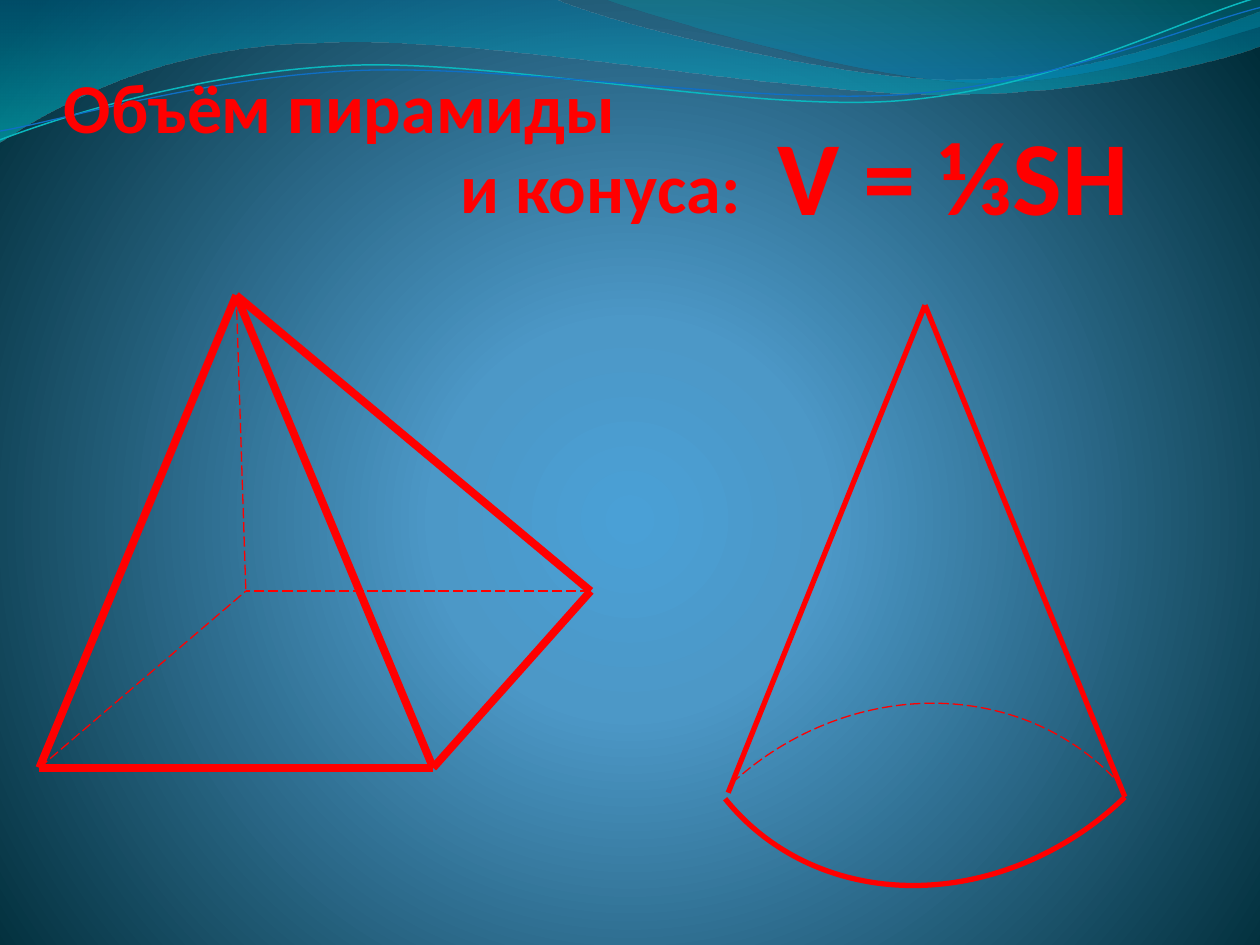
import lxml.etree
import pptx
import pptx.dml.color
import pptx.enum.dml
import pptx.enum.shapes
import pptx.enum.text
import pptx.oxml.ns
import pptx.util

Pt = pptx.util.Pt
RED = pptx.dml.color.RGBColor(0xFF, 0x00, 0x00)
SKY = pptx.dml.color.RGBColor(0x4A, 0xA0, 0xD6)
STEEL = pptx.dml.color.RGBColor(0x4C, 0x98, 0xC7)
NIGHT = pptx.dml.color.RGBColor(0x00, 0x2C, 0x38)
OCEAN = pptx.dml.color.RGBColor(0x00, 0x74, 0xA1)
AQUA = pptx.dml.color.RGBColor(0x00, 0xC6, 0xCF)
TEAL = pptx.dml.color.RGBColor(0x00, 0xA1, 0xA9)
AZURE = pptx.dml.color.RGBColor(0x00, 0x8B, 0xBF)
CYAN = pptx.dml.color.RGBColor(0x0A, 0xB8, 0xBF)
BLUE = pptx.dml.color.RGBColor(0x0F, 0x6F, 0xC6)
DASH = pptx.enum.dml.MSO_LINE.LONG_DASH


def add_node(parent, tag, **attributes):
    """Append a DrawingML element and return it."""
    node = lxml.etree.SubElement(parent, pptx.oxml.ns.qn(tag))
    for name, value in attributes.items():
        node.set(name, str(value))
    return node


def set_gradient(fill, element, stops, circle=None):
    """Fill with (percent, colour, opacity) stops, downwards or towards a circle's rectangle."""
    fill.gradient()
    gradient = next(element.iter(pptx.oxml.ns.qn("a:gradFill")))
    for child in list(gradient):
        gradient.remove(child)
    stop_list = add_node(gradient, "a:gsLst")
    for percent, colour, opacity in stops:
        stop = add_node(stop_list, "a:gs", pos=percent * 1000)
        shade = add_node(stop, "a:srgbClr", val=colour)
        if opacity < 100:
            add_node(shade, "a:alpha", val=opacity * 1000)
    if circle:
        focus = add_node(gradient, "a:path", path="circle")
        add_node(focus, "a:fillToRect", **circle)
    else:
        add_node(gradient, "a:lin", ang=5400000, scaled=0)


def bend_segments(outline, curves):
    """Join each three straight segments of a curve into one cubic segment."""
    segments = iter(list(outline.element.iter(pptx.oxml.ns.qn("a:lnTo"))))
    for curve in curves:
        group = [next(segments) for _ in range(len(curve) // 2)]
        if len(group) == 3:
            parent = group[0].getparent()
            cubic = add_node(parent, "a:cubicBezTo")
            group[0].addprevious(cubic)
            for segment in group:
                cubic.append(segment[0])
                parent.remove(segment)


def add_outline(page, box, start, curves, close):
    """Draw a freeform of cubic curves and straight steps relative to the box."""
    left, top = box
    corners = [start] + [curve[i:i + 2] for curve in curves for i in range(0, len(curve), 2)]
    points = [(Pt(left + x), Pt(top + y)) for x, y in corners]
    builder = page.shapes.build_freeform(*points[0])
    builder.add_line_segments(points[1:], close=close)
    outline = builder.convert_to_shape()
    bend_segments(outline, curves)
    outline.shadow.inherit = False
    return outline


def add_waves(page, box):
    """Draw two gradient bands and two thin waves, and place them on the master."""
    bands = [
        ((0, -0.7), [(316.8, -0.7), (342.7, 12.2, 478.1, 45.4, 545.8, 45.4),
                     (614.2, 45.4, 689.8, 18.7, 720, 6.5), (720.7, 25.9),
                     (707.8, 31.7, 626.4, 54.7, 537.1, 54),
                     (447.8, 54, 275, 20.2, 185, 24.5),
                     (92.9, 25.2, 33.1, 59.8, -0.7, 81.4)],
         [(0, OCEAN, 45), (100, AQUA, 55)]),
        ((344.9, -0.7), [(366.5, 7.9, 491, 44.6, 553.7, 46.8),
                         (616.3, 49.7, 691.9, 23, 720, 15.1), (720, 0)],
         [(0, TEAL, 30), (80, AZURE, 45)]),
    ]
    waves = [
        ((0, 79.9), [(34.6, 67, 113.8, 41, 199.4, 37.4),
                     (284.4, 33.8, 427, 64.1, 513.4, 57.6),
                     (599.8, 51.1, 675.4, 10.8, 718.6, -1.4)], CYAN, 0.85),
        ((0, 74.9), [(33.8, 69.1, 118.1, 43.9, 203.8, 40.3),
                     (290.2, 36.7, 429.8, 59.8, 516.2, 54),
                     (601.9, 48.2, 677.5, 15.1, 720, 4.3)], BLUE, 0.75),
    ]
    outlines = []
    for start, curves, stops in bands:
        band = add_outline(page, box, start, curves, True)
        set_gradient(band.fill, band.element, stops)
        band.line.fill.background()
        outlines.append(band)
    for start, curves, colour, width in waves:
        wave = add_outline(page, box, start, curves, False)
        wave.fill.background()
        wave.line.color.rgb = colour
        wave.line.width = Pt(width)
        outlines.append(wave)

    master_tree = page.slide_layout.slide_master.element.cSld.spTree
    for position, outline in enumerate(outlines):
        outline.element.nvSpPr.cNvPr.set("id", str(101 + position))
        master_tree.insert(2 + position, outline.element)


def style_line(line, width, dashed):
    """Make a line red, solid or dashed."""
    line.color.rgb = RED
    line.width = Pt(width)
    if dashed:
        line.dash_style = DASH


def add_edge(page, box, start, end, width, dashed=False):
    """Draw a straight edge between two points of the box."""
    left, top = box
    edge = page.shapes.add_connector(
        pptx.enum.shapes.MSO_CONNECTOR.STRAIGHT,
        Pt(left + start[0]), Pt(top + start[1]), Pt(left + end[0]), Pt(top + end[1]))
    style_line(edge.line, width, dashed)
    add_node(edge.element.spPr, "a:effectLst")


def add_pyramid(page, box):
    """Draw the pyramid with its three hidden edges dashed."""
    apex, near_left, near_right = (112.5, 0), (0, 270), (225, 270)
    far_right, far_left = (315, 169), (118, 169)
    for start, end in [(apex, near_left), (apex, near_right), (near_left, near_right),
                       (near_right, far_right), (apex, far_right)]:
        add_edge(page, box, start, end, 4.5)
    for start, end in [(far_right, far_left), (near_left, far_left), (apex, far_left)]:
        add_edge(page, box, start, end, 0.75, True)


def add_arc(page, box, place, rotation, width, dashed=False, end_angle=0):
    """Draw a rotated arc at a place relative to the box."""
    left, top, wide, high = place
    arc = page.shapes.add_shape(pptx.enum.shapes.MSO_SHAPE.ARC, Pt(box[0] + left),
                                Pt(box[1] + top), Pt(wide), Pt(high))
    if end_angle:
        arc.adjustments[1] = end_angle
    arc.rotation = rotation
    arc.shadow.inherit = False
    arc.fill.background()
    style_line(arc.line, width, dashed)


def add_cone(page, box):
    """Draw the cone with the far half of its base dashed."""
    apex = (172.8, 0)
    add_arc(page, box, (19.8, 29.5, 332, 292.3), 136.2, 3, end_angle=2.338)
    add_arc(page, box, (0, 234, 326.2, 298), 317.5, 0.75, True)
    for base in [(60.3, 278.6), (287, 281)]:
        add_edge(page, box, base, apex, 3)


def write_text(holder, box, text, size, align):
    """Place a text holder in the box and write one bold red line."""
    holder.left, holder.top, holder.width, holder.height = map(Pt, box)
    frame = holder.text_frame
    frame.word_wrap = True
    frame.auto_size = pptx.enum.text.MSO_AUTO_SIZE.NONE
    frame.vertical_anchor = pptx.enum.text.MSO_ANCHOR.BOTTOM
    frame.margin_left = frame.margin_right = frame.margin_top = frame.margin_bottom = 0
    para = frame.paragraphs[0]
    para.alignment = align
    span = para.add_run()
    span.text = text
    span.font.name = "Calibri"
    span.font.size = Pt(size)
    span.font.bold = True
    span.font.color.rgb = RED


def add_heading(page, box):
    """Write the title in two steps with the formula beside it."""
    left, top = box
    center, start = pptx.enum.text.PP_ALIGN.CENTER, pptx.enum.text.PP_ALIGN.LEFT
    title = page.shapes.title
    title.element.getparent().append(title.element)
    write_text(title, (left, top, 332, 56.2), "Объём пирамиды", 40, center)
    for place, text, size, align in [
            ((left + 416.4, top + 50.8, 242, 56.2), "V = ⅓SH", 60, start),
            ((left + 202.4, top + 45.2, 225.4, 56.2), "и конуса:", 40, center)]:
        holder = page.shapes.add_textbox(0, 0, 0, 0)
        write_text(holder, place, text, size, align)


def main():
    """Build the slide and save it."""
    deck = pptx.Presentation()
    deck.slide_width, deck.slide_height = Pt(720), Pt(540)
    page = deck.slides.add_slide(deck.slide_layouts[5])
    set_gradient(page.background.fill, page.element,
                 [(0, SKY, 100), (25, STEEL, 100), (100, NIGHT, 100)],
                 {"l": 10000, "t": 110000, "r": 10000, "b": 100000})
    add_waves(page, (0, 0))
    add_pyramid(page, (22.5, 168.75))
    add_cone(page, (355.8, 174.4))
    add_heading(page, (28.1, 28.3))
    deck.save("out.pptx")


if __name__ == "__main__":
    main()
